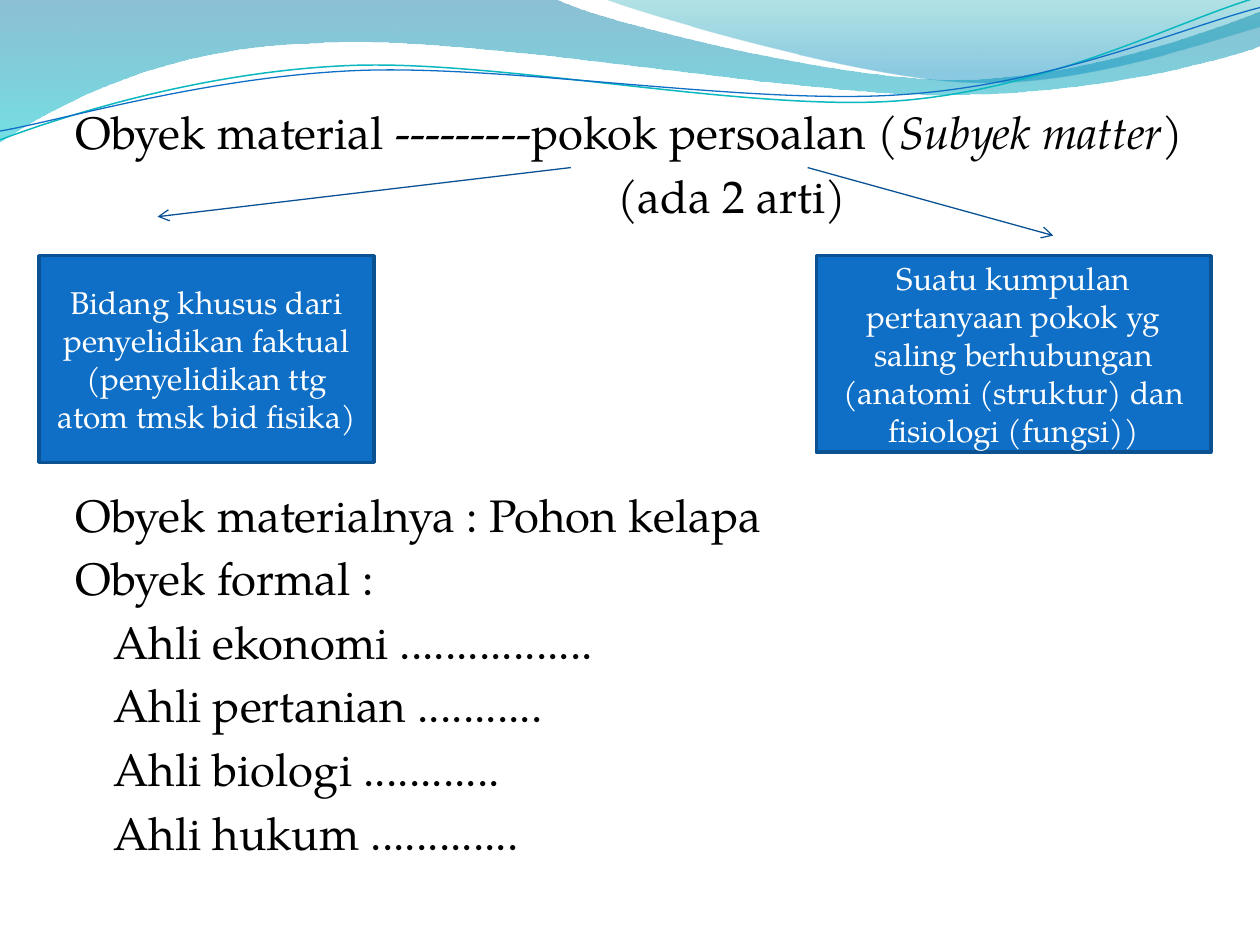
"""Build a slide on material and formal objects, with a wave banner on top."""
from math import cos, radians, sin
from lxml.etree import Element, SubElement
from pptx import Presentation
from pptx.dml.color import RGBColor
from pptx.enum.shapes import MSO_CONNECTOR, MSO_SHAPE
from pptx.enum.text import MSO_ANCHOR, PP_ALIGN
from pptx.oxml.ns import qn
from pptx.util import Inches, Pt

INK = {"text": "000000", "white": "FFFFFF", "box": "0F6FC6", "edge": "0B5292",
       "arrow": "095295", "teal": "0AB8BF", "deep": "0074A1", "aqua": "00C6CF",
       "sea": "00A1A9", "sky": "008BBF"}
FONT = "TeX Gyre Pagella"
TILT = 2.7

deck = Presentation()
deck.slide_width, deck.slide_height = Inches(10), Inches(7.5)
COL, ROW = deck.slide_width / 100, deck.slide_height / 75
slide = deck.slides.add_slide(deck.slide_layouts[6])
shapes = slide.shapes


def tint(name):
    return RGBColor.from_string(INK[name])


def trace(parts, closed, mid=(0, 0), tilt=0):
    turn = radians(tilt)
    dots = []
    for part in parts:
        for x, y in zip(part[::2], part[1::2]):
            dx, dy = x - mid[0], y - mid[1]
            dots.append((round((mid[0] + dx * cos(turn) - dy * sin(turn)) * COL),
                         round((mid[1] + dx * sin(turn) + dy * cos(turn)) * ROW)))
    pen = shapes.build_freeform(*dots[0])
    pen.add_line_segments(dots[1:], close=closed)
    wave = pen.convert_to_shape()
    wave.shadow.inherit = False
    wave.rotation = -tilt
    nodes = iter(list(wave.element.iter(qn("a:lnTo"))))
    for part in parts[1:]:
        node = next(nodes)
        if len(part) == 6:
            bend = Element(qn("a:cubicBezTo"))
            node.addprevious(bend)
            for leg in (node, next(nodes), next(nodes)):
                bend.append(leg[0])
                leg.getparent().remove(leg)
    return wave


bands = [
    ([(0, 0), (44, -0.1), (47.6, 1.7, 66.4, 6.3, 75.8, 6.3),
      (85.3, 6.3, 95.8, 2.6, 100, 0.9), (100.1, 3.6),
      (98.3, 4.4, 87, 7.6, 74.6, 7.5), (62.2, 7.5, 38.2, 2.8, 25.7, 3.4),
      (12.9, 3.6, 4.6, 8.3, -0.1, 11.3)],
     [(0, "deep", 45), (1, "aqua", 55)]),
    ([(47.9, -0.1), (50.9, 1.1, 68.2, 6.2, 76.9, 6.5),
      (85.6, 6.9, 96.1, 3.2, 100, 2.1), (100, 0)],
     [(0, "sea", 30), (0.8, "sky", 45)]),
]
for parts, stops in bands:
    wave = trace(parts, True)
    wave.line.fill.background()
    wave.fill.gradient()
    wave.fill.gradient_angle = 270
    for stop, (place, name, alpha) in zip(wave.fill.gradient_stops, stops):
        stop.position = place
        stop.color.rgb = tint(name)
    for node, stop in zip(wave.element.spPr.iter(qn("a:srgbClr")), stops):
        SubElement(node, qn("a:alpha"), val=str(stop[2] * 1000))

curves = [
    ([(0, 11.1), (4.8, 9.3, 15.8, 5.7, 27.7, 5.2), (39.5, 4.7, 59.3, 8.9, 71.3, 8),
      (83.3, 7.1, 93.8, 1.5, 99.8, -0.2)], (49.9, 5.75), "teal", 0.85),
    ([(0, 10.4), (4.7, 9.6, 16.4, 6.1, 28.3, 5.6), (40.3, 5.1, 59.7, 8.4, 71.7, 7.5),
      (83.6, 6.7, 94.1, 2.1, 100, 0.6)], (49.95, 5.9), "box", 0.75),
]
for parts, mid, name, width in curves:
    wave = trace(parts, False, mid, TILT)
    wave.fill.background()
    wave.line.color.rgb = tint(name)
    wave.line.width = Pt(width)

GAP, BREAK = 5.2, 150.8
lines = [
    (0, GAP, ["Obyek material ---------pokok persoalan (", "Subyek matter", ")"]),
    (43, GAP, ["(ada 2 arti)"]),
    (0, BREAK, ["Obyek materialnya : Pohon kelapa"]),
    (0, GAP, ["Obyek formal :"]),
    (3, GAP, ["Ahli ekonomi ................."]),
    (3, GAP, ["Ahli pertanian ..........."]),
    (3, GAP, ["Ahli biologi ............"]),
    (3, GAP, ["Ahli hukum ............."]),
]
body = shapes.add_textbox(*map(round, (5 * COL, 7.8 * ROW, 90 * COL, 61.4 * ROW)))
frame = body.text_frame
frame.word_wrap = True
for row, (indent, gap, words) in enumerate(lines):
    para = frame.add_paragraph() if row else frame.paragraphs[0]
    para.font.name, para.font.size = FONT, Pt(26)
    para.font.color.rgb = tint("text")
    para.space_before = Pt(gap)
    para._p.get_or_add_pPr().set("marL", str(round(indent * COL)))
    for spot, word in enumerate(words):
        run = para.add_run()
        run.text = word
        if spot == 1:
            run.font.italic = True

cards = [
    (3.1, 26.6, 16.4, ["Bidang khusus dari penyelidikan faktual",
                       "(penyelidikan ttg atom tmsk bid fisika)"]),
    (64.8, 31.3, 15.6, ["Suatu kumpulan pertanyaan pokok yg saling berhubungan",
                        "(anatomi (struktur) dan fisiologi (fungsi))"]),
]
for left, wide, tall, lines in cards:
    card = shapes.add_shape(MSO_SHAPE.RECTANGLE,
                            *map(round, (left * COL, 20.3 * ROW, wide * COL, tall * ROW)))
    card.shadow.inherit = False
    card.fill.solid()
    card.fill.fore_color.rgb = tint("box")
    card.line.color.rgb = tint("edge")
    card.line.width = Pt(2)
    frame = card.text_frame
    frame.word_wrap = True
    frame.vertical_anchor = MSO_ANCHOR.MIDDLE
    frame.text = "\n".join(lines)
    for para in frame.paragraphs:
        para.alignment = PP_ALIGN.CENTER
        para.font.name, para.font.size = FONT, Pt(18)
        para.font.color.rgb = tint("white")

for x, end, low in [(45.3, 12.5, 17.2), (64.1, 83.6, 18.7)]:
    arrow = shapes.add_connector(MSO_CONNECTOR.STRAIGHT,
                                 *map(round, (x * COL, 13.3 * ROW, end * COL, low * ROW)))
    arrow.line.color.rgb = tint("arrow")
    arrow.line.width = Pt(0.75)
    SubElement(arrow.line._get_or_add_ln(), qn("a:tailEnd"), type="arrow")
    SubElement(arrow._element.spPr, qn("a:effectLst"))

deck.save("out.pptx")
